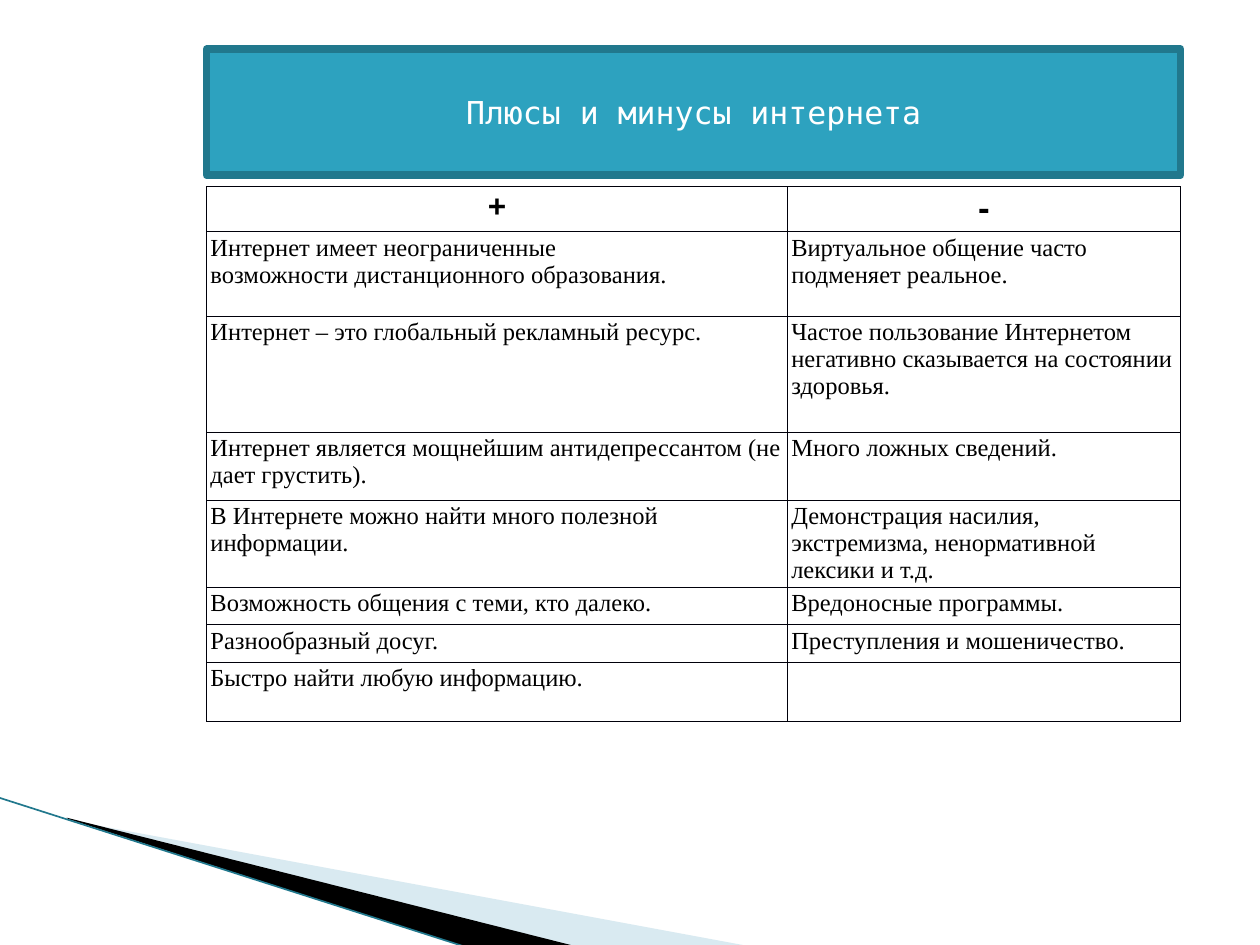
from dataclasses import dataclass

from lxml import etree
from pptx import Presentation
from pptx.dml.color import RGBColor
from pptx.enum.shapes import MSO_CONNECTOR
from pptx.enum.text import MSO_ANCHOR, MSO_AUTO_SIZE, PP_ALIGN
from pptx.oxml import parse_xml
from pptx.oxml.ns import nsdecls, qn
from pptx.util import Inches, Pt

CENTER, LEFT, JUSTIFY = PP_ALIGN.CENTER, PP_ALIGN.LEFT, PP_ALIGN.JUSTIFY
MIDDLE = MSO_ANCHOR.MIDDLE
NO_AUTOFIT = MSO_AUTO_SIZE.NONE
STRAIGHT = MSO_CONNECTOR.STRAIGHT
TITLE_ONLY = 5


@dataclass(frozen=True)
class Theme:
    teal: str = "2DA2BF"
    dark_teal: str = "21788D"
    pale_blue: str = "A0CBDC"
    black: str = "000000"
    white: str = "FFFFFF"
    grid: str = "00000A"
    title_font: str = "DejaVu Sans Mono"
    sign_font: str = "Arial"
    body_font: str = "Times New Roman"
    title_size: int = 18
    plus_size: int = 18
    minus_size: int = 20
    body_size: int = 14


THEME = Theme()

SIGNS = [("+", THEME.plus_size), ("-", THEME.minus_size)]
ARGUMENTS = [
    ("Интернет имеет неограниченные\nвозможности дистанционного образования.",
     "Виртуальное общение часто подменяет реальное."),
    ("Интернет – это глобальный рекламный ресурс.",
     "Частое пользование Интернетом негативно сказывается на состоянии здоровья."),
    ("Интернет является мощнейшим антидепрессантом (не дает грустить).",
     "Много ложных сведений."),
    ("В Интернете можно найти много полезной информации.",
     "Демонстрация насилия, экстремизма, ненормативной лексики и т.д."),
    ("Возможность общения с теми, кто далеко.", "Вредоносные программы."),
    ("Разнообразный досуг.", "Преступления и мошеничество."),
    ("Быстро найти любую информацию.", ""),
]
JUSTIFIED = {"Вредоносные программы.", "Преступления и мошеничество."}
COLUMN_WIDTHS = [4.61, 3.12]
ROW_HEIGHTS = [0.36, 0.67, 0.92, 0.54, 0.69, 0.3, 0.3, 0.47]


def paint(fill, color):
    fill.solid()
    fill.fore_color.rgb = RGBColor.from_string(color)


def style_font(font, name, size, color, bold=False):
    font.name, font.size, font.bold = name, Pt(size), bold
    font.color.rgb = RGBColor.from_string(color)


def reframe(outline, left, top, width, height):
    """Give an outline a new frame while its corners stay where they are."""
    shift_x, shift_y = outline.left - left, outline.top - top
    outline.left, outline.top = left, top
    outline.width, outline.height = width, height
    for contour in outline._element.iter(qn("a:path")):
        contour.set("w", str(width))
        contour.set("h", str(height))
        for corner in contour.iter(qn("a:pt")):
            corner.set("x", str(int(corner.get("x")) + shift_x))
            corner.set("y", str(int(corner.get("y")) + shift_y))


def add_wedge(slide, left, top, points, frame, color, opacity=100):
    """Draw an unlined outline; points and frame are relative to left, top."""
    corners = [(Inches(left + x), Inches(top + y)) for x, y in points]
    builder = slide.shapes.build_freeform(*corners[0])
    builder.add_line_segments(corners[1:], close=True)
    wedge = builder.convert_to_shape()
    frame_x, frame_y, width, height = frame
    reframe(wedge, Inches(left + frame_x), Inches(top + frame_y),
            Inches(width), Inches(height))
    wedge.shadow.inherit = False
    paint(wedge.fill, color)
    wedge.line.fill.background()
    if opacity < 100:
        tint = next(wedge._element.spPr.iter(qn("a:srgbClr")))
        etree.SubElement(tint, qn("a:alpha"), val=str(opacity * 1000))


def add_corner_decoration(slide, left, top, width, height):
    base = height - 0.01
    add_wedge(slide, left, top,
              [(0.56, 0.18), (5.96, base), (4.57, base), (0.56, 0.17)],
              (0.79, -0.86, 4.16, 1.58), THEME.pale_blue, opacity=40)
    add_wedge(slide, left, top,
              [(0.54, 0.16), (4.58, base), (width, height), (0.55, 0.17)],
              (-0.05, 0, 4.16, 0.92), THEME.black)
    edge = slide.shapes.add_connector(
        STRAIGHT, Inches(left), Inches(top),
        Inches(left + width), Inches(top + height))
    edge.line.color.rgb = RGBColor.from_string(THEME.dark_teal)
    edge.line.width = Pt(0.95)
    etree.SubElement(edge._element.spPr, qn("a:effectLst"))


def fill_title(slide, left, top, width, height):
    title = slide.shapes.title
    title.left, title.top = Inches(left), Inches(top)
    title.width, title.height = Inches(width), Inches(height)
    paint(title.fill, THEME.teal)
    title.line.color.rgb = RGBColor.from_string(THEME.dark_teal)
    title.line.width = Pt(4.33)
    etree.SubElement(title.line._ln, qn("a:round"))
    frame = title.text_frame
    frame.text = "Плюсы и минусы интернета"
    frame.auto_size = NO_AUTOFIT
    frame.vertical_anchor = MIDDLE
    heading = frame.paragraphs[0]
    heading.alignment = CENTER
    style_font(heading.runs[0].font, THEME.title_font, THEME.title_size, THEME.white)


def add_borders(cell):
    properties = cell._tc.get_or_add_tcPr()
    for index, side in enumerate(("lnL", "lnR", "lnT", "lnB")):
        properties.insert(index, parse_xml(
            f'<a:{side} {nsdecls("a")} w="{Pt(0.6)}"><a:solidFill>'
            f'<a:srgbClr val="{THEME.grid}"/></a:solidFill></a:{side}>'))


def fill_cell(cell, text, alignment, font_name, size, bold=False):
    cell.margin_left = cell.margin_right = Inches(0.03)
    cell.margin_top = cell.margin_bottom = Inches(0.02)
    paint(cell.fill, THEME.white)
    add_borders(cell)
    cell.text_frame.text = text
    for paragraph in cell.text_frame.paragraphs:
        paragraph.alignment = alignment
        for run in paragraph.runs:
            style_font(run.font, font_name, size, THEME.black, bold)


def add_comparison(slide, left, top, width, height):
    table = slide.shapes.add_table(
        len(ROW_HEIGHTS), len(COLUMN_WIDTHS),
        Inches(left), Inches(top), Inches(width), Inches(height)).table
    table.first_row = table.horz_banding = False
    for column, column_width in zip(table.columns, COLUMN_WIDTHS):
        column.width = Inches(column_width)
    for row, row_height in zip(table.rows, ROW_HEIGHTS):
        row.height = Inches(row_height)
    for column, (sign, size) in enumerate(SIGNS):
        fill_cell(table.cell(0, column), sign, CENTER, THEME.sign_font, size, True)
    for row, pair in enumerate(ARGUMENTS, start=1):
        for column, argument in enumerate(pair):
            alignment = JUSTIFY if argument in JUSTIFIED else LEFT
            fill_cell(table.cell(row, column), argument, alignment,
                      THEME.body_font, THEME.body_size)


def main():
    presentation = Presentation()
    presentation.slide_width, presentation.slide_height = Inches(10), Inches(7.5)
    slide = presentation.slides.add_slide(presentation.slide_layouts[TITLE_ONLY])
    add_corner_decoration(slide, -0.01, 6.33, 3.72, 1.19)
    fill_title(slide, 1.64, 0.39, 7.73, 1)
    add_comparison(slide, 1.64, 1.48, sum(COLUMN_WIDTHS), sum(ROW_HEIGHTS))
    presentation.save("out.pptx")


if __name__ == "__main__":
    main()
